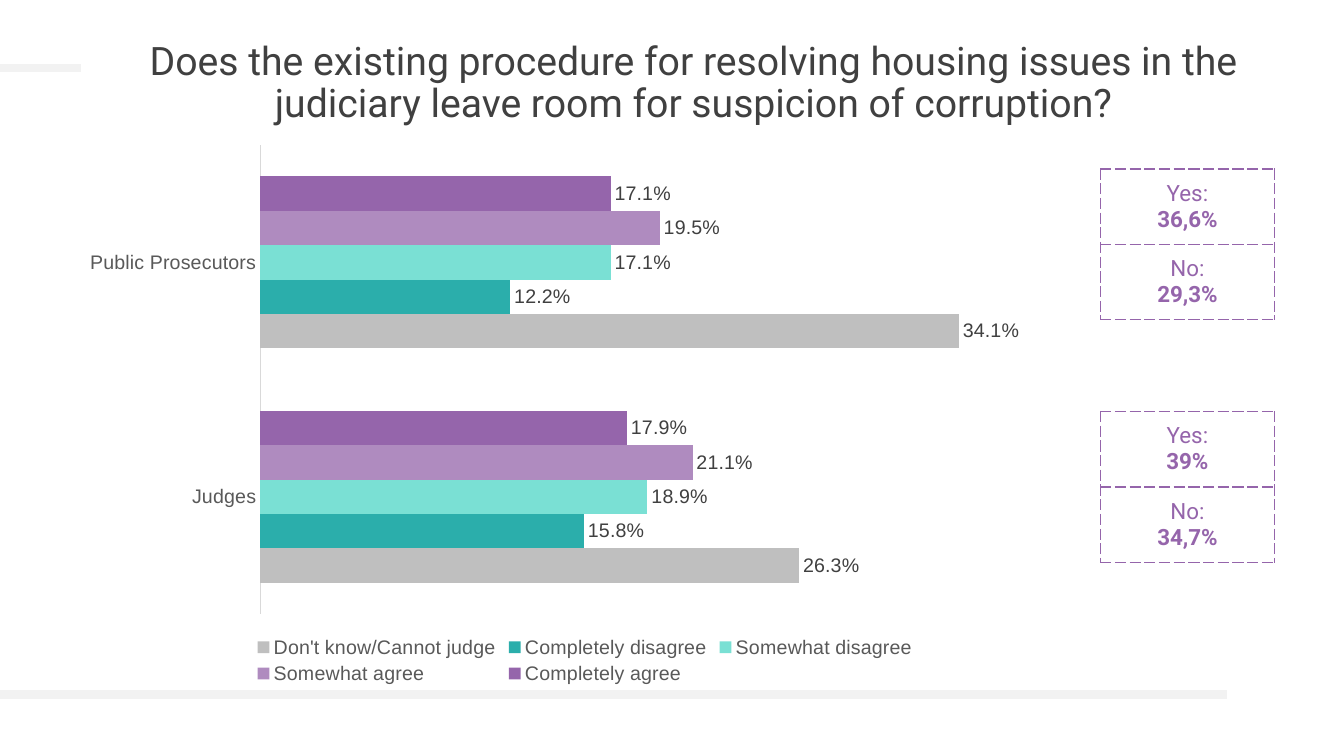
import pptx
import pptx.chart.data
import pptx.dml.color
import pptx.enum.chart
import pptx.enum.shapes
import pptx.enum.text
import pptx.oxml
import pptx.oxml.ns
import pptx.util
from pptx.util import Cm

PURPLE = "9565AB"
DARK = "404040"
GREY = "595959"
PALE = "F2F2F2"

QUESTION = ("Does the existing procedure for resolving housing issues in the "
            "judiciary leave room for suspicion of corruption?")
GROUPS = ["Public Prosecutors", "Judges"]
ANSWERS = [
    ("Completely agree", (0.171, 0.179), PURPLE),
    ("Somewhat agree", (0.195, 0.211), "AF8BBF"),
    ("Somewhat disagree", (0.171, 0.189), "7AE0D4"),
    ("Completely disagree", (0.122, 0.158), "2BAEAB"),
    ("Don't know/Cannot judge", (0.341, 0.263), "BFBFBF"),
]
TOTALS = [
    [("Yes:", "36,6%"), ("No:", "29,3%")],
    [("Yes:", "39%"), ("No:", "34,7%")],
]


def color(value):
    return pptx.dml.color.RGBColor.from_string(value)


def set_font(font, name, size, value, bold=False):
    font.name = name
    font.size = pptx.util.Pt(size)
    font.color.rgb = color(value)
    font.bold = bold


def add_title(slide, left, top, width, height):
    title = slide.shapes.title
    title.left, title.top, title.width, title.height = left, top, width, height
    frame = title.text_frame
    frame.text = QUESTION
    frame.word_wrap = True
    frame.auto_size = pptx.enum.text.MSO_AUTO_SIZE.NONE
    frame.vertical_anchor = pptx.enum.text.MSO_ANCHOR.MIDDLE
    para = frame.paragraphs[0]
    para.alignment = pptx.enum.text.PP_ALIGN.CENTER
    para.line_spacing = 0.9
    set_font(para.runs[0].font, "Roboto", 28, DARK)


def add_rule(slide, top, width):
    """Draw a pale bar that starts at the left edge of the slide."""
    rule = slide.shapes.add_connector(
        pptx.enum.shapes.MSO_CONNECTOR.STRAIGHT, 0, top, width, top)
    rule.line.color.rgb = color(PALE)
    rule.line.width = pptx.util.Pt(6)
    properties = rule._element.spPr
    properties.append(properties.makeelement(pptx.oxml.ns.qn("a:effectLst"), {}))


def set_dashed_borders(cell):
    properties = cell._tc.get_or_add_tcPr()
    for index, side in enumerate(("lnL", "lnR", "lnT", "lnB")):
        border = pptx.oxml.parse_xml(
            f'<a:{side} {pptx.oxml.ns.nsdecls("a")} w="12700">'
            f'<a:solidFill><a:srgbClr val="{PURPLE}"/></a:solidFill>'
            f'<a:prstDash val="dash"/></a:{side}>')
        properties.insert(index, border)


def add_totals(slide, totals, left, top, width, height):
    table = slide.shapes.add_table(len(totals), 1, left, top, width, height).table
    table.first_row = False
    table.horz_banding = False
    for row, lines in enumerate(totals):
        cell = table.cell(row, 0)
        cell.fill.background()
        cell.vertical_anchor = pptx.enum.text.MSO_ANCHOR.MIDDLE
        set_dashed_borders(cell)
        cell.text_frame.text = "\n".join(lines)
        for index, para in enumerate(cell.text_frame.paragraphs):
            para.alignment = pptx.enum.text.PP_ALIGN.CENTER
            set_font(para.runs[0].font, "Roboto", 16, PURPLE, bold=index == 1)


def format_axes(chart):
    groups = chart.category_axis
    groups.reverse_order = True
    groups.major_tick_mark = pptx.enum.chart.XL_TICK_MARK.NONE
    groups.format.line.color.rgb = color("D9D9D9")
    groups.format.line.width = pptx.util.Pt(0.75)
    set_font(groups.tick_labels.font, "Arial", 14, GREY)
    shares = chart.value_axis
    shares.minimum_scale = 0
    shares.maximum_scale = 0.4
    shares.has_major_gridlines = False
    shares.visible = False


def add_answers_chart(slide, left, top, width, height):
    data = pptx.chart.data.CategoryChartData(number_format="0.0%")
    data.categories = GROUPS
    for name, values, _ in ANSWERS:
        data.add_series(name, values)
    chart = slide.shapes.add_chart(
        pptx.enum.chart.XL_CHART_TYPE.BAR_CLUSTERED,
        left, top, width, height, data).chart
    set_font(chart.font, "Arial", 14, "000000")
    chart.has_title = False
    chart.has_legend = True
    chart.legend.position = pptx.enum.chart.XL_LEGEND_POSITION.BOTTOM
    chart.legend.include_in_layout = False
    set_font(chart.legend.font, "Arial", 14, GREY)
    format_axes(chart)

    plot = chart.plots[0]
    plot.gap_width = 182
    plot.overlap = 0
    plot.vary_by_categories = False
    for series, (_, _, fill) in zip(plot.series, ANSWERS):
        series.format.fill.solid()
        series.format.fill.fore_color.rgb = color(fill)
        labels = series.data_labels
        labels.show_value = True
        labels.number_format = "0.0%"
        labels.number_format_is_linked = False
        labels.position = pptx.enum.chart.XL_LABEL_POSITION.OUTSIDE_END
        set_font(labels.font, "Arial", 14, DARK)


def main():
    deck = pptx.Presentation()
    deck.slide_width, deck.slide_height = Cm(33.87), Cm(19.05)
    slide = deck.slides.add_slide(deck.slide_layouts.get_by_name("Title Only"))
    add_rule(slide, Cm(1.72), Cm(2.03))
    add_title(slide, Cm(2.03), Cm(0.89), Cm(30.89), Cm(2.44))
    add_rule(slide, Cm(17.5), Cm(30.91))
    for index, totals in enumerate(TOTALS):
        add_totals(slide, totals, Cm(27.74), Cm(4.26 + index * 6.11), Cm(4.37), Cm(3.8))
    add_answers_chart(slide, Cm(1.75), Cm(3.38), Cm(25.98), Cm(13.97))
    deck.save("out.pptx")


if __name__ == "__main__":
    main()
